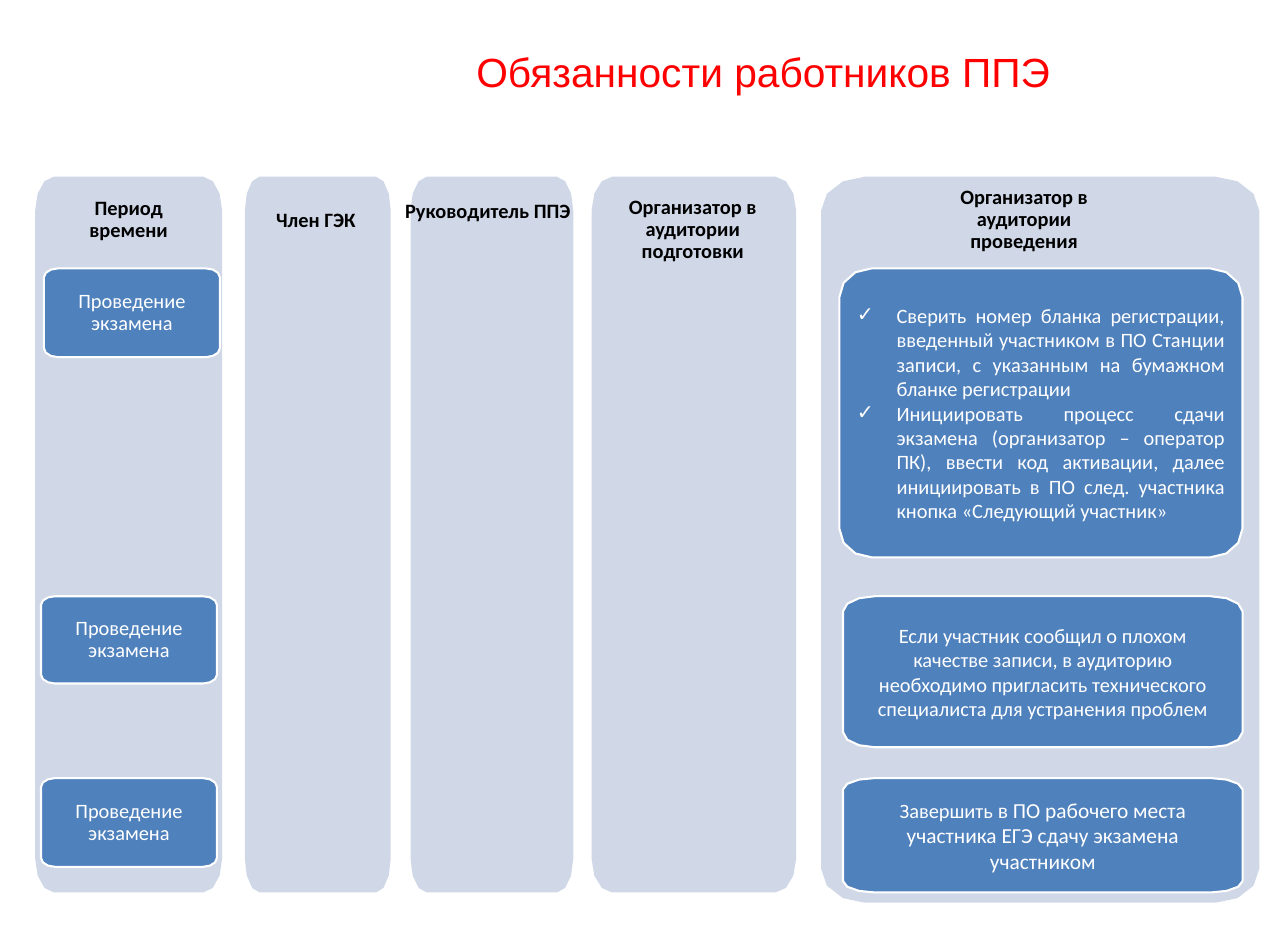
from math import cos, pi, sin

from lxml.etree import SubElement
from pptx import Presentation
from pptx.dml.color import RGBColor
from pptx.enum.text import MSO_ANCHOR, MSO_AUTO_SIZE, PP_ALIGN
from pptx.oxml.ns import qn
from pptx.util import Pt

SCALE = 9144
SLIDE_SIZE = (1757, 1279)

RED = RGBColor(0xFF, 0x00, 0x00)
BLACK = RGBColor(0x00, 0x00, 0x00)
WHITE = RGBColor(0xFF, 0xFF, 0xFF)
PALE_BLUE = RGBColor(0xD0, 0xD8, 0xE8)
BLUE = RGBColor(0x4F, 0x81, 0xBD)

TITLE = "Обязанности работников ППЭ"
TITLE_BOX = (332, -3, 1418, 200)
COLUMN_TOP = 241
COLUMNS = [
    ("Период времени", (48, 255, 976), (65, 261, 221, 78)),
    ("Член ГЭК", (334, 199, 976), (348, 277, 166, 48)),
    ("Руководитель ППЭ", (560, 222, 976), (528, 265, 275, 78)),
    ("Организатор в аудитории подготовки", (807, 279, 976), (798, 260, 294, 108)),
    ("Организатор в аудитории проведения", (1120, 598, 990), (1255, 246, 284, 108)),
]
PERIOD = "Проведение экзамена"
PERIOD_BOXES = [(60, 366, 240, 121), (56, 813, 240, 119), (56, 1061, 240, 121)]
DUTIES = [
    ((1145, 366, 550, 394), True, [
        [("Сверить номер бланка регистрации, введенный участником в ПО Станции "
          "записи, с указанным на бумажном бланке регистрации", 20)],
        [("Инициировать процесс сдачи экзамена (организатор – оператор ПК), ввести "
          "код активации, далее инициировать в ПО след. участника кнопка "
          "«Следующий участник»", 20)],
    ]),
    ((1150, 813, 545, 206), False, [
        [("Если участник сообщил о плохом качестве записи, в аудиторию необходимо "
          "пригласить технического специалиста для устранения проблем", 20)],
    ]),
    ((1150, 1061, 545, 156), False, [
        [("Завершить", 20),
         (" в ПО рабочего места участника ЕГЭ сдачу экзамена участником", 21)],
    ]),
]
CHECK_INDENT = 54
CORNER_STEPS = 3


def px(value):
    return round(value * SCALE)


def add_panel(slide, box, corner, fill):
    left, top, width, height = box
    rx, ry = width * corner[0], height * corner[1]
    centres = [
        (left + width - rx, top + height - ry),
        (left + rx, top + height - ry),
        (left + rx, top + ry),
        (left + width - rx, top + ry),
    ]
    outline = []
    for quarter, (cx, cy) in enumerate(centres):
        for step in range(CORNER_STEPS + 1):
            angle = (quarter + step / CORNER_STEPS) * pi / 2
            outline.append((px(cx + rx * cos(angle)), px(cy + ry * sin(angle))))
    builder = slide.shapes.build_freeform(*outline[0], scale=1.0)
    builder.add_line_segments(outline[1:], close=True)
    panel = builder.convert_to_shape()
    panel.shadow.inherit = False
    panel.fill.solid()
    panel.fill.fore_color.rgb = fill
    panel.line.fill.background()
    return panel


def set_frame(frame, side, edge, anchor):
    frame.word_wrap = True
    frame.auto_size = MSO_AUTO_SIZE.NONE
    frame.vertical_anchor = anchor
    frame.margin_left = frame.margin_right = px(side)
    frame.margin_top = frame.margin_bottom = px(edge)


def write(frame, paragraphs, color, font="Calibri", bold=False, spacing=1.0, checked=False):
    for index, runs in enumerate(paragraphs):
        paragraph = frame.add_paragraph() if index else frame.paragraphs[0]
        if checked:
            properties = paragraph._p.get_or_add_pPr()
            properties.set("marL", str(px(CHECK_INDENT)))
            properties.set("indent", str(-px(CHECK_INDENT)))
            SubElement(properties, qn("a:buFont")).set("typeface", "Calibri")
            SubElement(properties, qn("a:buChar")).set("char", "✓")
        paragraph.alignment = PP_ALIGN.JUSTIFY if checked else PP_ALIGN.CENTER
        paragraph.line_spacing = spacing
        for text, size in runs:
            run = paragraph.add_run()
            run.text = text
            run.font.size = Pt(size)
            run.font.name = font
            run.font.bold = bold
            run.font.color.rgb = color


def add_task(slide, box, paragraphs, spacing=1.0, checked=False):
    task = add_panel(slide, box, (0.08, 0.1), BLUE)
    task.line.color.rgb = WHITE
    task.line.width = Pt(2)
    set_frame(task.text_frame, 24, 20, MSO_ANCHOR.MIDDLE)
    write(task.text_frame, paragraphs, WHITE, spacing=spacing, checked=checked)


def main():
    presentation = Presentation()
    presentation.slide_width, presentation.slide_height = map(px, SLIDE_SIZE)
    slide = presentation.slides.add_slide(presentation.slide_layouts[5])

    title = slide.shapes.title
    title.left, title.top, title.width, title.height = map(px, TITLE_BOX)
    set_frame(title.text_frame, 17, 9, MSO_ANCHOR.MIDDLE)
    write(title.text_frame, [[(TITLE, 40)]], RED, font="Arial")

    for _, (left, width, height), _ in COLUMNS:
        add_panel(slide, (left, COLUMN_TOP, width, height), (0.1, 0.047), PALE_BLUE)
    for role, _, heading_box in COLUMNS:
        heading = slide.shapes.add_textbox(*map(px, heading_box)).text_frame
        set_frame(heading, 17, 9, MSO_ANCHOR.TOP)
        write(heading, [[(role, 20)]], BLACK, bold=True, spacing=0.9)

    for box, checked, paragraphs in DUTIES:
        add_task(slide, box, paragraphs, checked=checked)
    for box in PERIOD_BOXES:
        add_task(slide, box, [[(PERIOD, 20)]], spacing=0.9)

    presentation.save("out.pptx")


if __name__ == "__main__":
    main()
